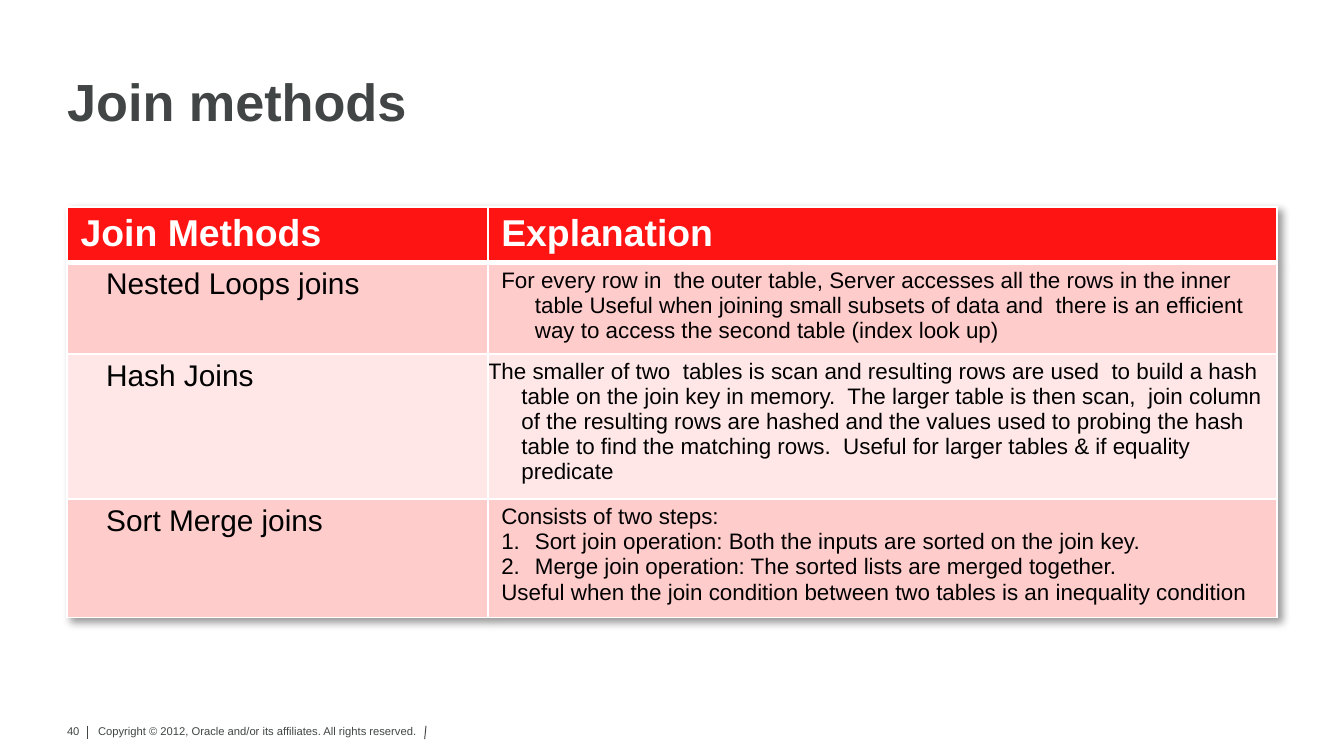
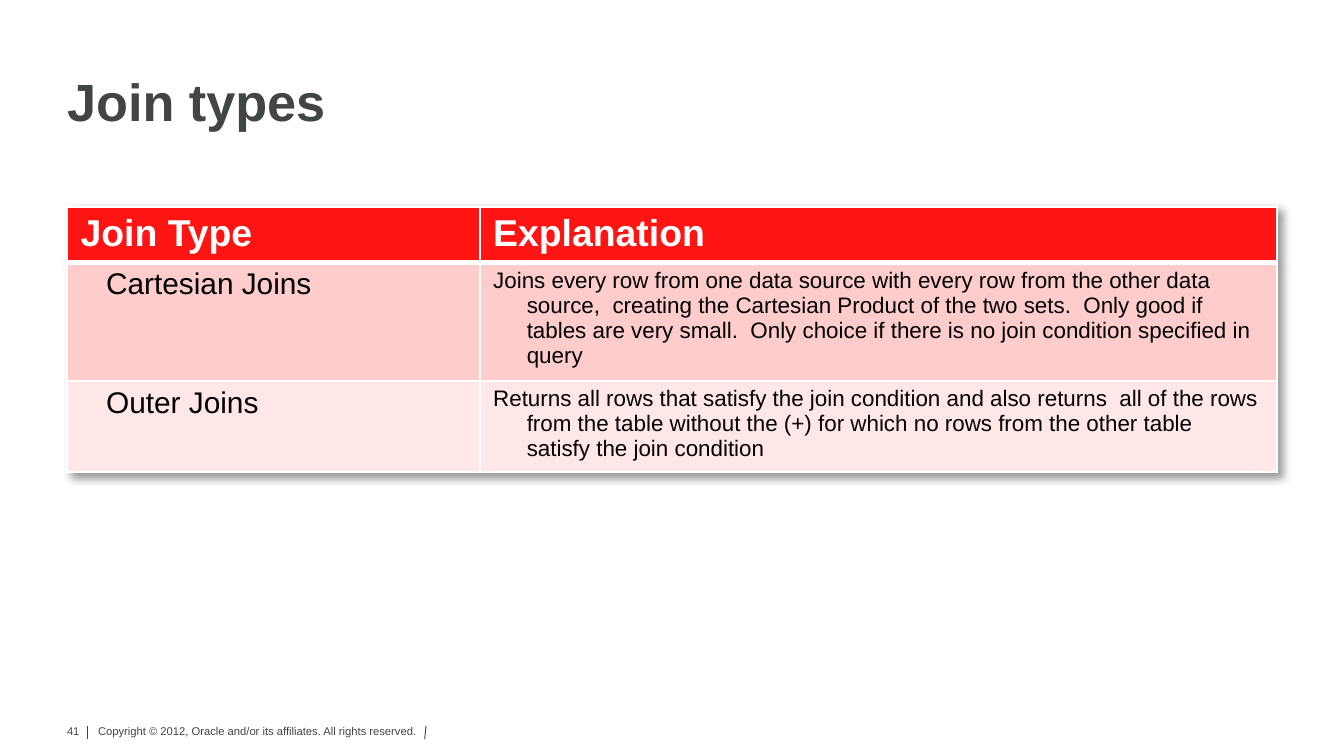
from lxml.etree import SubElement
from pptx import Presentation
from pptx.dml.color import RGBColor
from pptx.enum.text import MSO_ANCHOR, PP_ALIGN
from pptx.oxml import parse_xml
from pptx.oxml.ns import qn
from pptx.util import Inches, Pt

GREY = RGBColor(0x42, 0x45, 0x45)
WHITE = RGBColor(0xFF, 0xFF, 0xFF)
BLACK = RGBColor(0, 0, 0)
RED = RGBColor(0xFF, 0x14, 0x14)
BANDS = [RGBColor(0xFF, 0xCC, 0xCC), RGBColor(0xFF, 0xE7, 0xE7)]
FONT = "Arial"
DRAWING_NS = 'xmlns:a="http://schemas.openxmlformats.org/drawingml/2006/main"'
TABLE_SHADOW = (
    f'<a:effectLst {DRAWING_NS}><a:outerShdw blurRad="50800" dist="38100" dir="2700000">'
    '<a:srgbClr val="000000"><a:alpha val="40000"/></a:srgbClr></a:outerShdw></a:effectLst>'
)
COPYRIGHT = "Copyright © 2012, Oracle and/or its affiliates. All rights reserved."

# Each row: name, explanation paragraphs; a leading "#" marks a numbered step.
SLIDES = [
    {
        "number": 40,
        "title": "Join methods",
        "widths": [3.13, 5.87],
        "height": 3.03,
        "header": "Join Methods",
        "rows": [
            ("Nested Loops joins", [
                "For every row in  the outer table, Server accesses all the rows in the inner "
                "table Useful when joining small subsets of data and  there is an efficient "
                "way to access the second table (index look up)"]),
            ("Hash Joins", [
                "The smaller of two  tables is scan and resulting rows are used  to build a "
                "hash table on the join key in memory.  The larger table is then scan,  join "
                "column of the resulting rows are hashed and the values used to probing the "
                "hash table to find the matching rows.  Useful for larger tables & if "
                "equality predicate"]),
            ("Sort Merge joins", [
                "Consists of two steps:",
                "#Sort join operation: Both the inputs are sorted on the join key.",
                "#Merge join operation: The sorted lists are merged together.",
                "Useful when the join condition between two tables is an inequality condition"]),
        ],
    },
    {
        "number": 41,
        "title": "Join types",
        "widths": [3.07, 5.93],
        "height": 1.96,
        "header": "Join Type",
        "rows": [
            ("Cartesian Joins", [
                "Joins every row from one data source with every row from the other data "
                "source,  creating the Cartesian Product of the two sets.  Only good if "
                "tables are very small.  Only choice if there is no join condition specified "
                "in query"]),
            ("Outer Joins", [
                "Returns all rows that satisfy the join condition and also returns  all of "
                "the rows from the table without the (+) for which no rows from the other "
                "table satisfy the join condition"]),
        ],
    },
]


def write(frame, text, size, color, bold=False, align=None, spacing=None,
          margin=0, indent=0, numbered=False):
    """Fill the frame's empty first paragraph, or add another one."""
    paragraph = frame.paragraphs[0]
    if paragraph.runs:
        paragraph = frame.add_paragraph()
    properties = paragraph._p.get_or_add_pPr()
    properties.set("marL", str(Inches(margin)))
    properties.set("indent", str(Inches(indent)))
    if numbered:
        SubElement(properties, qn("a:buFont"), typeface="+mj-lt")
        SubElement(properties, qn("a:buAutoNum"), type="arabicPeriod")
    paragraph.alignment = align
    paragraph.line_spacing = spacing
    run = paragraph.add_run()
    run.text = text
    run.font.name = FONT
    run.font.size = Pt(size)
    run.font.bold = bold
    run.font.color.rgb = color


def style_cell(cell, fill, top=1, bottom=1, left_inset=0.1, right_inset=0.1):
    cell.margin_left, cell.margin_right = Inches(left_inset), Inches(right_inset)
    cell.margin_top = cell.margin_bottom = Inches(0.04)
    cell.fill.solid()
    cell.fill.fore_color.rgb = fill
    borders = {"lnL": 1, "lnR": 1, "lnT": top, "lnB": bottom}
    for position, (side, width) in enumerate(borders.items()):
        cell._tc.tcPr.insert(position, parse_xml(
            f'<a:{side} {DRAWING_NS} w="{Pt(width)}"><a:solidFill>'
            f'<a:srgbClr val="{WHITE}"/></a:solidFill></a:{side}>'))


prs = Presentation()
prs.slide_width = Inches(10)
prs.slide_height = prs.slide_width * 9 // 16

for content in SLIDES:
    slide = prs.slides.add_slide(prs.slide_layouts[6])

    # Footer
    footer = slide.shapes.add_textbox(
        Inches(0.69), Inches(5.37), Inches(2.74), Inches(0.24)).text_frame
    footer.word_wrap = True
    footer.margin_left = footer.margin_right = Inches(0.04)
    footer.margin_top = footer.margin_bottom = Inches(0.02)
    write(footer, COPYRIGHT, size=6, color=GREY)
    for top_x, bottom_x in ((0.65, 0.65), (3.17, 3.16)):
        divider = slide.shapes.add_connector(
            1, Inches(top_x), Inches(5.4), Inches(bottom_x), Inches(5.5))
        divider.line.color.rgb = GREY
        divider.line.width = Pt(0.5)
        SubElement(divider._element.spPr, qn("a:effectLst"))
    page = slide.shapes.add_textbox(
        Inches(0.39), Inches(5.34), Inches(0.3), Inches(0.2)).text_frame
    page.word_wrap = False
    write(page, str(content["number"]), size=6, color=GREY, align=PP_ALIGN.RIGHT)

    # Title
    title = slide.shapes.add_textbox(
        Inches(0.5), Inches(0.53), Inches(9), Inches(0.46)).text_frame
    title.word_wrap = True
    title.vertical_anchor = MSO_ANCHOR.BOTTOM
    title.margin_left = title.margin_right = title.margin_top = title.margin_bottom = 0
    write(title, content["title"], size=28, color=GREY, bold=True, spacing=0.9)

    # Table: rows grow with their text inside the full frame height
    table_frame = slide.shapes.add_table(
        len(content["rows"]) + 1, 2, Inches(0.5), Inches(1.54), Inches(9), Inches(1))
    joins = table_frame.table
    joins._tbl.tblPr.insert(0, parse_xml(TABLE_SHADOW))
    for column, width in zip(joins.columns, content["widths"]):
        column.width = Inches(width)
    for row in joins.rows:
        row.height = Inches(0.41)
    table_frame.height = Inches(content["height"])
    for column, heading in enumerate((content["header"], "Explanation")):
        cell = joins.cell(0, column)
        style_cell(cell, RED, bottom=3)
        write(cell.text_frame, heading, size=20, color=WHITE, bold=True)
    for row, (name, explanation) in enumerate(content["rows"], start=1):
        band = BANDS[(row - 1) % 2]
        top = 3 if row == 1 else 1
        left_inset, right_inset = (0, 0.1) if name == "Hash Joins" else (0.1, 0.12)
        name_cell, explanation_cell = joins.cell(row, 0), joins.cell(row, 1)
        style_cell(name_cell, band, top=top)
        write(name_cell.text_frame, name, size=16, color=BLACK, margin=0.19)
        style_cell(explanation_cell, band, top=top,
                   left_inset=left_inset, right_inset=right_inset)
        for text in explanation:
            write(explanation_cell.text_frame, text.removeprefix("#"), size=12, color=BLACK,
                  margin=0.25, indent=-0.25, numbered=text.startswith("#"))

prs.save("out.pptx")
